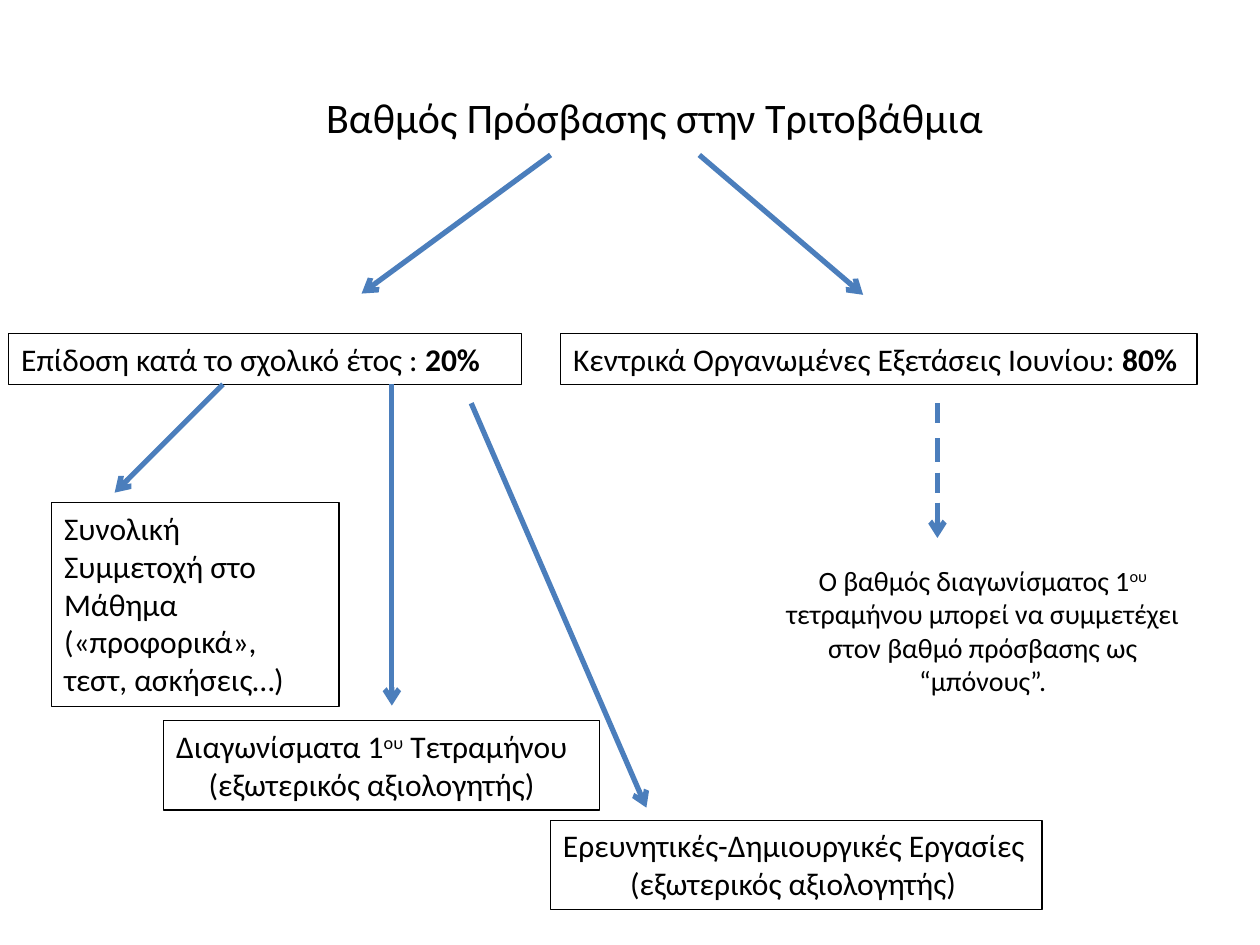
from lxml.etree import SubElement
from pptx import Presentation
from pptx.dml.color import RGBColor
from pptx.enum.shapes import MSO_CONNECTOR, MSO_SHAPE
from pptx.enum.text import MSO_ANCHOR, PP_ALIGN
from pptx.oxml.ns import qn
from pptx.util import Pt

SCALE = 9144
COLOURS = {"ink": "000000", "arrow": "4B7EBC"}


class Diagram:
    """Holds the style and the current page of the grading diagram."""

    font = "Calibri"

    def __init__(self, page):
        self.page = page

    def colour(self, name):
        return RGBColor.from_string(COLOURS[name])

    def fill_text(self, text_frame, paragraphs, size, centred, right_margin=0):
        text_frame.word_wrap = True
        text_frame.vertical_anchor = MSO_ANCHOR.TOP
        for index, spans in enumerate(paragraphs):
            para = text_frame.add_paragraph() if index else text_frame.paragraphs[0]
            para.alignment = PP_ALIGN.CENTER if index in centred else PP_ALIGN.LEFT
            if index in centred and right_margin:
                para._p.get_or_add_pPr().set("marR", str(right_margin * SCALE))
            for text, style in spans:
                span = para.add_run()
                span.text = text
                span.font.name = self.font
                span.font.size = Pt(size)
                span.font.color.rgb = self.colour("ink")
                if style == "bold":
                    span.font.bold = True
                elif style == "raised":
                    span.font._element.set("baseline", "30000")

    def label(self, place, spans, size):
        box = self.page.shapes.add_textbox(*(value * SCALE for value in place))
        self.fill_text(box.text_frame, [spans], size, centred=(0,))

    def box(self, place, paragraphs, centred=(), right_margin=0):
        box = self.page.shapes.add_shape(
            MSO_SHAPE.RECTANGLE, *(value * SCALE for value in place))
        box.shadow.inherit = False
        box.fill.background()
        box.line.color.rgb = self.colour("ink")
        box.line.width = Pt(0.75)
        self.fill_text(box.text_frame, paragraphs, 18, centred, right_margin)

    def line(self, start, end, arrow=True):
        connector = self.page.shapes.add_connector(
            MSO_CONNECTOR.STRAIGHT, *(value * SCALE for value in start + end))
        connector.line.color.rgb = self.colour("arrow")
        connector.line.width = Pt(3)
        if arrow:
            SubElement(connector.line._get_or_add_ln(), qn("a:tailEnd"), type="arrow")
        SubElement(connector._element.spPr, qn("a:effectLst"))


def main():
    deck = Presentation()
    deck.slide_width, deck.slide_height = 1000 * SCALE, 750 * SCALE
    diagram = Diagram(deck.slides.add_slide(deck.slide_layouts[6]))
    assessor = [("(εξωτερικός αξιολογητής)", None)]

    diagram.label((224, 68, 591, 50), [("Βαθμός Πρόσβασης στην Τριτοβάθμια", None)], 24)
    diagram.box((7, 265, 407, 40),
                [[("Επίδοση κατά το σχολικό έτος : ", None), ("20%", "bold")]])
    diagram.box((445, 265, 505, 40),
                [[("Κεντρικά Οργανωμένες Εξετάσεις Ιουνίου: ", None), ("80%", "bold")]])
    diagram.box((41, 399, 228, 162),
                [[("Συνολική Συμμετοχή στο Μάθημα", None)],
                 [("(«προφορικά», τεστ, ασκήσεις…)", None)]])
    diagram.box((130, 572, 346, 71),
                [[("Διαγωνίσματα 1", None), ("ου", "raised"), (" Τετραμήνου", None)],
                 assessor], centred=(1,), right_margin=16)
    diagram.box((437, 651, 390, 71),
                [[("Ερευνητικές-Δημιουργικές Εργασίες", None)], assessor],
                centred=(1,), right_margin=5)
    diagram.label((610, 442, 340, 118),
                  [("Ο βαθμός διαγωνίσματος 1", None), ("ου", "raised"),
                   (" τετραμήνου μπορεί να συμμετέχει στον βαθμό πρόσβασης ως “μπόνους”.",
                    None)], 16)

    for start, end in (((437, 123), (287, 233)), ((555, 123), (685, 234)),
                       ((177, 305), (91, 391)), ((311, 305), (311, 560)),
                       ((374, 320), (513, 641))):
        diagram.line(start, end)
    for top, bottom in ((320, 336), (348, 367), (375, 391), (399, 427)):
        diagram.line((744, top), (744, bottom), arrow=bottom == 427)

    deck.save("out.pptx")


if __name__ == "__main__":
    main()
